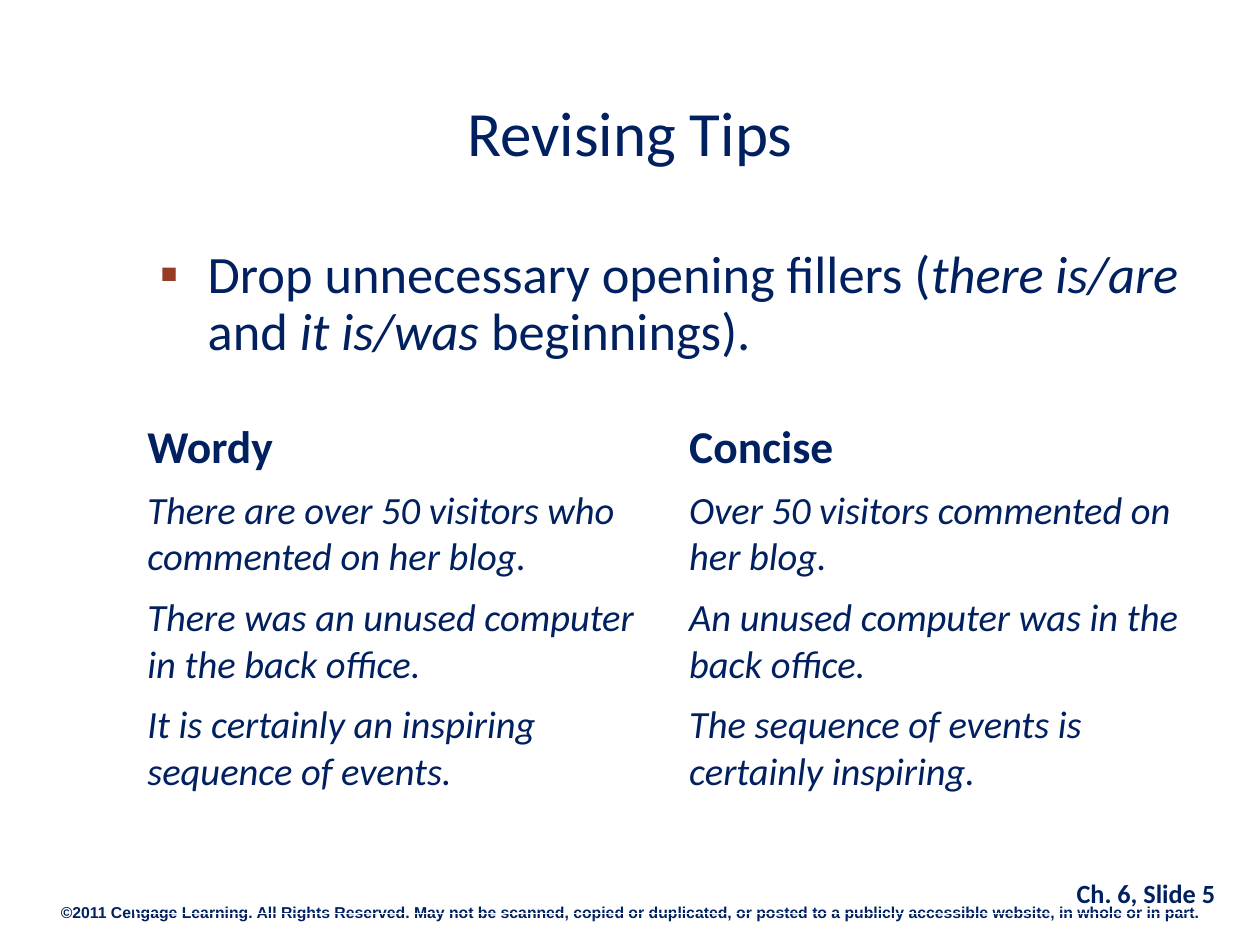
from dataclasses import dataclass

from lxml import etree
from pptx import Presentation
from pptx.dml.color import RGBColor
from pptx.enum.text import MSO_ANCHOR, PP_ALIGN
from pptx.oxml.ns import qn
from pptx.util import Inches, Pt

LEFT, CENTER = PP_ALIGN.LEFT, PP_ALIGN.CENTER
TOP, MIDDLE = MSO_ANCHOR.TOP, MSO_ANCHOR.MIDDLE


@dataclass(frozen=True)
class Theme:
    navy: RGBColor = RGBColor.from_string("002060")
    bullet: str = "963C26"
    font: str = "Calibri"
    footer_font: str = "Arial"
    title: int = 36
    body: int = 30
    heading: int = 26
    example: int = 22
    slide_number: int = 15
    copyright: int = 9


def write_text(paragraph, runs, size, font, color, bold=False, italic=False,
               align=LEFT, spacing=1.0):
    paragraph.alignment = align
    paragraph.line_spacing = spacing
    if isinstance(runs, str):
        runs = [(runs, italic)]
    for text, slanted in runs:
        run = paragraph.add_run()
        run.text = text
        run.font.size = Pt(size)
        run.font.name = font
        run.font.color.rgb = color
        run.font.bold = bold
        run.font.italic = slanted


class SlideBuilder:
    def __init__(self, slide, theme):
        self.slide = slide
        self.theme = theme

    def text(self, box, runs, size, font=None, anchor=TOP, bullet=None, **text_format):
        shape = self.slide.shapes.add_textbox(*map(Inches, box))
        frame = shape.text_frame
        frame.word_wrap = True
        frame.vertical_anchor = anchor
        paragraph = frame.paragraphs[0]
        if bullet:
            self.bullet(paragraph, bullet)
        write_text(paragraph, runs, size, font or self.theme.font,
                   self.theme.navy, **text_format)

    def bullet(self, paragraph, character, indent=0.38):
        properties = paragraph._p.get_or_add_pPr()
        properties.set("marL", str(Inches(indent)))
        properties.set("indent", str(-Inches(indent)))
        color = etree.SubElement(properties, qn("a:buClr"))
        etree.SubElement(color, qn("a:srgbClr"), val=self.theme.bullet)
        etree.SubElement(properties, qn("a:buFont"), typeface=self.theme.font)
        etree.SubElement(properties, qn("a:buChar"), char=character)

    def table(self, box, rows, heights):
        theme = self.theme
        frame = self.slide.shapes.add_table(len(heights), len(rows[0]), *map(Inches, box))
        table = frame.table
        table.first_row = False
        table.horz_banding = False
        for row, height in zip(table.rows, heights):
            row.height = Inches(height)
        for cell in table.iter_cells():
            cell.fill.background()
        for row_index, texts in enumerate(rows):
            header = row_index == 0
            for column_index, text in enumerate(texts):
                paragraph = table.cell(row_index, column_index).text_frame.paragraphs[0]
                write_text(paragraph, text, theme.heading if header else theme.example,
                           theme.font, theme.navy, bold=header, italic=not header)


def main():
    presentation = Presentation()
    presentation.slide_width = Inches(10)
    presentation.slide_height = Inches(7.5)
    slide = presentation.slides.add_slide(presentation.slide_layouts[6])
    theme = Theme()
    builder = SlideBuilder(slide, theme)

    builder.text(
        (0, 7.17, 10, 0.19),
        "©2011 Cengage Learning. All Rights Reserved. May not be scanned, copied or "
        "duplicated, or posted to a publicly accessible website, in whole or in part.",
        theme.copyright, font=theme.footer_font, bold=True, align=CENTER, spacing=0.6)
    builder.text((8.19, 7, 1.81, 0.33), "Ch. 6, Slide 5", theme.slide_number,
                 bold=True, align=CENTER, spacing=0.6)
    builder.text(
        (1.17, 1.92, 8.58, 4.67),
        [("Drop unnecessary opening fillers (", False), ("there is/are ", True),
         ("and", False), (" it is/was", True), (" beginnings).", False)],
        theme.body, bullet="▪", spacing=0.9)
    builder.text((0.25, 0.58, 9.5, 1), "Revising Tips", theme.title,
                 anchor=MIDDLE, align=CENTER, spacing=0.9)

    examples = [
        ("Wordy", "Concise"),
        ("There are over 50 visitors who commented on her blog.",
         "Over 50 visitors commented on her blog."),
        ("There was an unused computer in the back office.",
         "An unused computer was in the back office."),
        ("It is certainly an inspiring sequence of events.",
         "The sequence of events is certainly inspiring."),
    ]
    heights = [0.54] + [0.85] * 3 + [0.44] * 2
    builder.table((1.07, 3.28, 8.6, sum(heights)), examples, heights)

    presentation.save("out.pptx")


if __name__ == "__main__":
    main()
